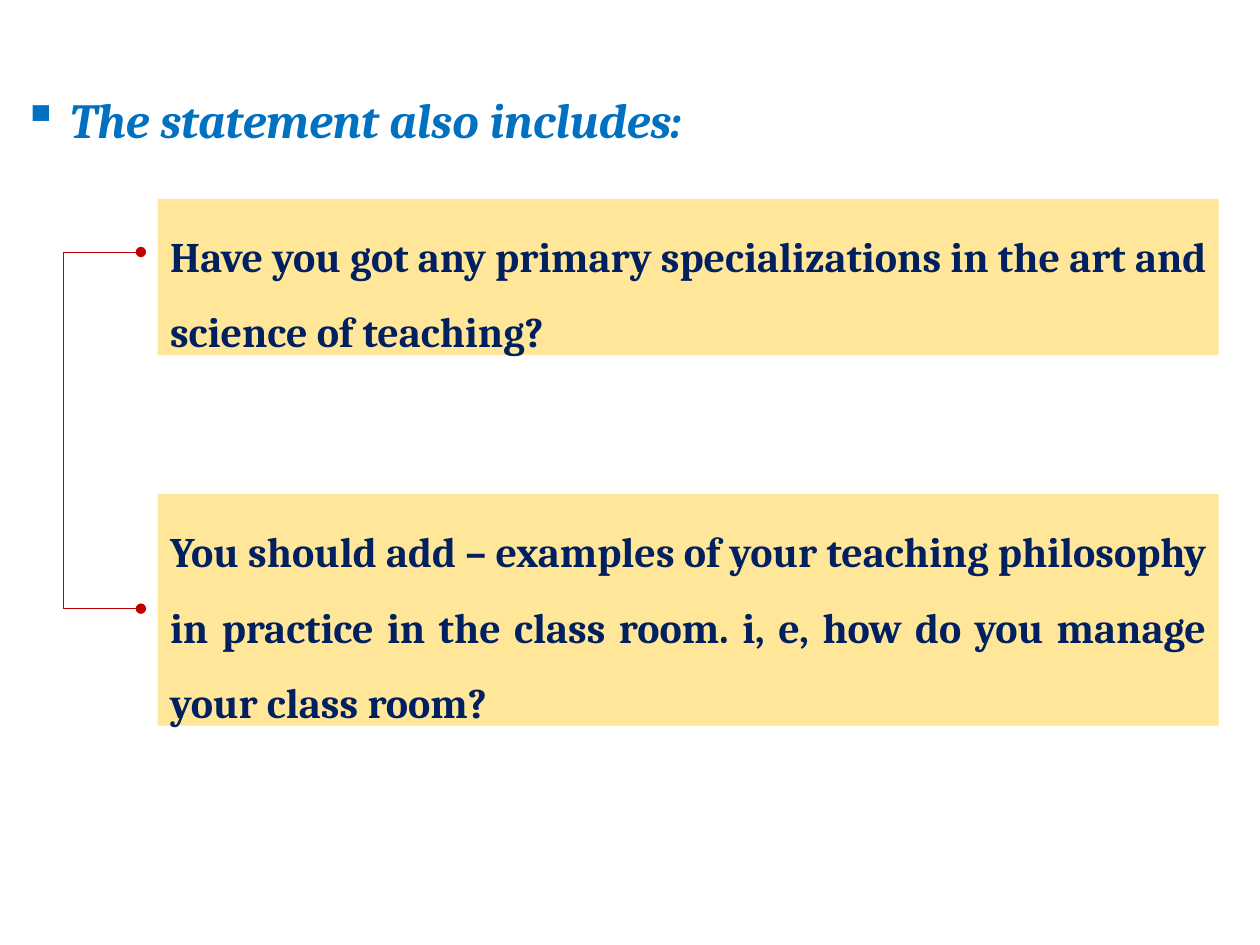
from dataclasses import dataclass

from lxml import etree
from pptx import Presentation, util as u
from pptx.dml.color import RGBColor
from pptx.enum import shapes, text
from pptx.oxml.ns import qn

RED, GOLD, NAVY, BLUE, WHITE = "C00000", "FFE699", "002060", "0070C0", "FFFFFF"
RAIL = 1.27  # x of the bracket, cm
TIP = 2.84   # x of the dots, cm


@dataclass
class Point:
    top: float
    high: float
    dot: float  # y of the branch leading to this box
    words: str


POINTS = [
    Point(4.01, 3.15, 5.08, "Have you got any primary specializations in the "
          "art and science of teaching?"),
    Point(9.96, 4.67, 12.27, "You should add – examples of your teaching "
          "philosophy in practice in the class room. i, e, how do you manage "
          "your class room?"),
]


def paint(target, tone: str) -> None:
    """Give a fill a solid colour."""
    target.solid()
    target.fore_color.rgb = RGBColor.from_string(tone)


def write(frame, words: str, tone: str, looks: dict):
    """Put one justified paragraph in the frame and return it."""
    frame.word_wrap = True
    para = frame.paragraphs[0]
    para.alignment = text.PP_ALIGN.JUSTIFY
    run = para.add_run()
    run.text = words
    paint(run.font.fill, tone)
    for name, value in {"name": "Cambria", "bold": True, **looks}.items():
        setattr(run.font, name, value)
    return para


def draw_line(slide, x1: float, y1: float, x2: float, y2: float,
              dot: bool = False) -> None:
    line = slide.shapes.add_connector(
        shapes.MSO_CONNECTOR.STRAIGHT, *map(u.Cm, (x1, y1, x2, y2)))
    line.line.width = u.Pt(0.5)
    paint(line.line.fill, RED)
    props = line._element.spPr
    if dot:
        etree.SubElement(props.find(qn("a:ln")), qn("a:tailEnd"), type="oval")
    etree.SubElement(props, qn("a:effectLst"))


def draw_point(slide, point: Point) -> None:
    box = slide.shapes.add_textbox(
        *map(u.Cm, (3.18, point.top, 21.39, point.high)))
    paint(box.fill, GOLD)
    para = write(box.text_frame, point.words, NAVY, {"size": u.Pt(24)})
    para.line_spacing = 1.5
    box.text_frame.auto_size = text.MSO_AUTO_SIZE.SHAPE_TO_FIT_TEXT


def set_title(slide) -> None:
    title = slide.shapes.title
    place = {"left": 0.2, "top": 1.27, "width": 21.59, "height": 2.26}
    for name, value in place.items():
        setattr(title, name, u.Cm(value))
    paint(title.fill, WHITE)
    frame = title.text_frame
    frame.auto_size = text.MSO_AUTO_SIZE.NONE
    frame.vertical_anchor = text.MSO_ANCHOR.MIDDLE
    para = write(frame, "The statement also includes:", BLUE,
                 {"size": u.Pt(28), "italic": True})
    props = para._p.get_or_add_pPr()
    dent = u.Cm(0.95)
    props.set("marL", str(dent))
    props.set("indent", str(-dent))
    etree.SubElement(props, qn("a:buChar"), char="▪")


def main() -> None:
    deck = Presentation()
    deck.slide_width, deck.slide_height = u.Cm(25.4), u.Cm(19.05)
    slide = deck.slides.add_slide(deck.slide_layouts[5])
    paint(slide.background.fill, WHITE)
    set_title(slide)
    draw_line(slide, RAIL, POINTS[0].dot, RAIL, POINTS[-1].dot)
    for point in POINTS:
        draw_line(slide, RAIL, point.dot, TIP, point.dot, dot=True)
        draw_point(slide, point)
    deck.save("out.pptx")


if __name__ == "__main__":
    main()
